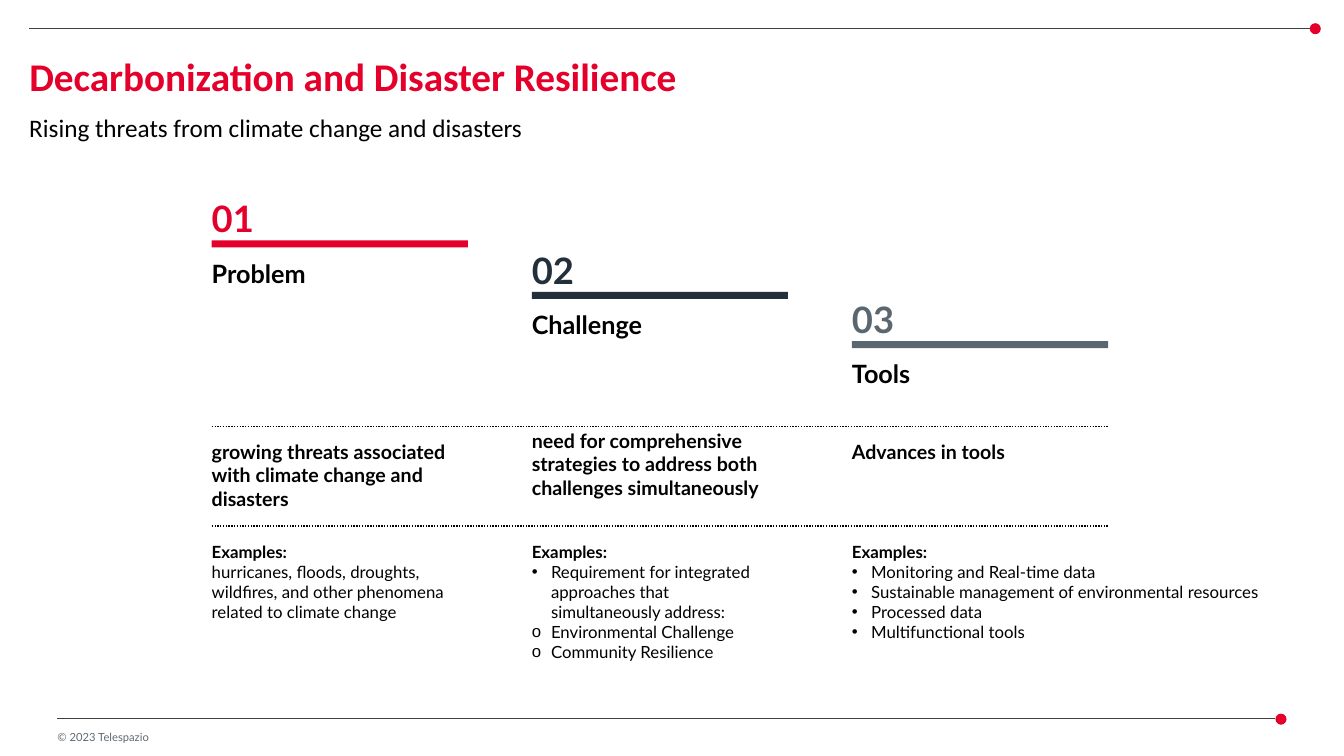
from pptx import Presentation
from pptx.dml.color import RGBColor
from pptx.enum.dml import MSO_LINE_DASH_STYLE as DASH
from pptx.enum.shapes import MSO_CONNECTOR, MSO_SHAPE
from pptx.enum.text import MSO_ANCHOR, MSO_AUTO_SIZE, PP_ALIGN
from pptx.oxml.ns import qn
from pptx.util import Inches, Pt
from lxml.etree import SubElement

THEME = {
    "red": RGBColor.from_string("E4002B"),
    "navy": RGBColor.from_string("232F3A"),
    "slate": RGBColor.from_string("5B6770"),
    "footer": RGBColor.from_string("5E6A71"),
    "rule": RGBColor.from_string("3D4144"),
    "black": RGBColor.from_string("000000"),
    "title_font": "Calibri",
    "body_font": "Lato",
    "sizes": {"title": 28, "number": 26, "heading": 18, "summary": 14,
              "detail": 12, "footer": 8},
}

prs = Presentation()
prs.slide_width, prs.slide_height = Inches(13.33), Inches(7.5)
s = prs.slides.add_slide(prs.slide_layouts[5])


def write_text(sp, box, paragraphs, size, color="black", font="body_font",
               spacing=None, anchor=MSO_ANCHOR.TOP, insets=(0, 0, 0, 0)):
    sp.left, sp.top, sp.width, sp.height = map(Inches, box)
    tf = sp.text_frame
    left, top, right, bottom = map(Inches, insets)
    frame_format = {"word_wrap": True, "auto_size": MSO_AUTO_SIZE.NONE,
                    "vertical_anchor": anchor, "margin_left": left,
                    "margin_top": top, "margin_right": right,
                    "margin_bottom": bottom}
    for name, value in frame_format.items():
        setattr(tf, name, value)
    for i, (text, bold, bullet) in enumerate(paragraphs):
        p = tf.add_paragraph() if i else tf.paragraphs[0]
        p.alignment = PP_ALIGN.LEFT
        if spacing:
            p.line_spacing = spacing
        if bullet:
            pPr = p._p.get_or_add_pPr()
            pPr.set("marL", str(Inches(0.19)))
            pPr.set("indent", str(-Inches(0.19)))
            SubElement(pPr, qn("a:buFont")).set("typeface", "Arial")
            SubElement(pPr, qn("a:buChar")).set("char", bullet)
        r = p.add_run()
        r.text = text
        run_format = {"name": THEME[font], "size": Pt(THEME["sizes"][size]),
                      "bold": bold}
        for name, value in run_format.items():
            setattr(r.font, name, value)
        r.font.color.rgb = THEME[color]


def add_filled(kind, box, color):
    sp = s.shapes.add_shape(kind, *map(Inches, box))
    sp.shadow.inherit = False
    sp.fill.solid()
    sp.fill.fore_color.rgb = THEME[color]
    sp.line.fill.background()


rules = [
    (0.29, 12.99, 0.28, "rule", 0.75, None),
    (0.57, 12.65, 7.13, "rule", 0.75, None),
    (2.1, 10.99, 4.23, "black", 1, DASH.ROUND_DOT),
    (2.1, 10.99, 5.22, "black", 1, DASH.ROUND_DOT),
]
for x1, x2, y, color, weight, dash in rules:
    rule = s.shapes.add_connector(MSO_CONNECTOR.STRAIGHT, Inches(x1), Inches(y),
                                  Inches(x2), Inches(y))
    rule.line.color.rgb = THEME[color]
    rule.line.width = Pt(weight)
    if dash:
        rule.line.dash_style = dash
    else:
        add_filled(MSO_SHAPE.OVAL, (x2, y - 0.05, 0.11, 0.11), "red")
    SubElement(rule._element.spPr, qn("a:effectLst"))

write_text(s.shapes.title, (0.29, 0.46, 12.76, 0.53),
           [("Decarbonization and Disaster Resilience", True, None)],
           "title", "red", "title_font", 0.9, MSO_ANCHOR.BOTTOM)
write_text(s.shapes.add_textbox(0, 0, 0, 0), (0.29, 1.15, 12.76, 0.51),
           [("Rising threats from climate change and disasters", False, None)],
           "heading", font="title_font", spacing=0.9)
write_text(s.shapes.add_textbox(0, 0, 0, 0), (0.57, 7.25, 2.3, 0.13),
           [("© 2023 Telespazio", False, None)], "footer", "footer")

columns = [
    ("Problem", "red", 1.95, 4.36, 2.54,
     "growing threats associated with climate change and disasters",
     [("hurricanes, floods, droughts, wildfires, and other phenomena "
       "related to climate change", False, None)]),
    ("Challenge", "navy", 2.46, 4.25, 2.54,
     "need for comprehensive strategies to address both challenges simultaneously",
     [("Requirement for integrated approaches that simultaneously address:",
       False, "•"),
      ("Environmental Challenge", False, "o"),
      ("Community Resilience", False, "o")]),
    ("Tools", "slate", 2.95, 4.36, 4.44, "Advances in tools",
     [("Monitoring and Real-time data", False, "•"),
      ("Sustainable management of environmental resources", False, "•"),
      ("Processed data", False, "•"),
      ("Multifunctional tools", False, "•")]),
]
column_width = 2.54
for i, column in enumerate(columns):
    heading, color, top, summary_top, detail_width, summary, examples = column
    x = 2.1 + i * 3.175
    add_filled(MSO_SHAPE.RECTANGLE, (x, top + 0.435, column_width, 0.07), color)
    labels = [
        (f"{i + 1:02}", top, 0.44, "number", color),
        (heading, top + 0.61, 0.3, "heading", "black"),
        (summary, summary_top, 0.71, "summary", "black"),
    ]
    for text, y, height, size, label_color in labels:
        write_text(s.shapes.add_textbox(0, 0, 0, 0), (x, y, column_width, height),
                   [(text, True, None)], size, label_color)
    write_text(s.shapes.add_textbox(0, 0, 0, 0), (x, 5.32, detail_width, 1.31),
               [("Examples:", True, None)] + examples, "detail",
               insets=(0, 0.05, 0.1, 0.05))

prs.save("out.pptx")
